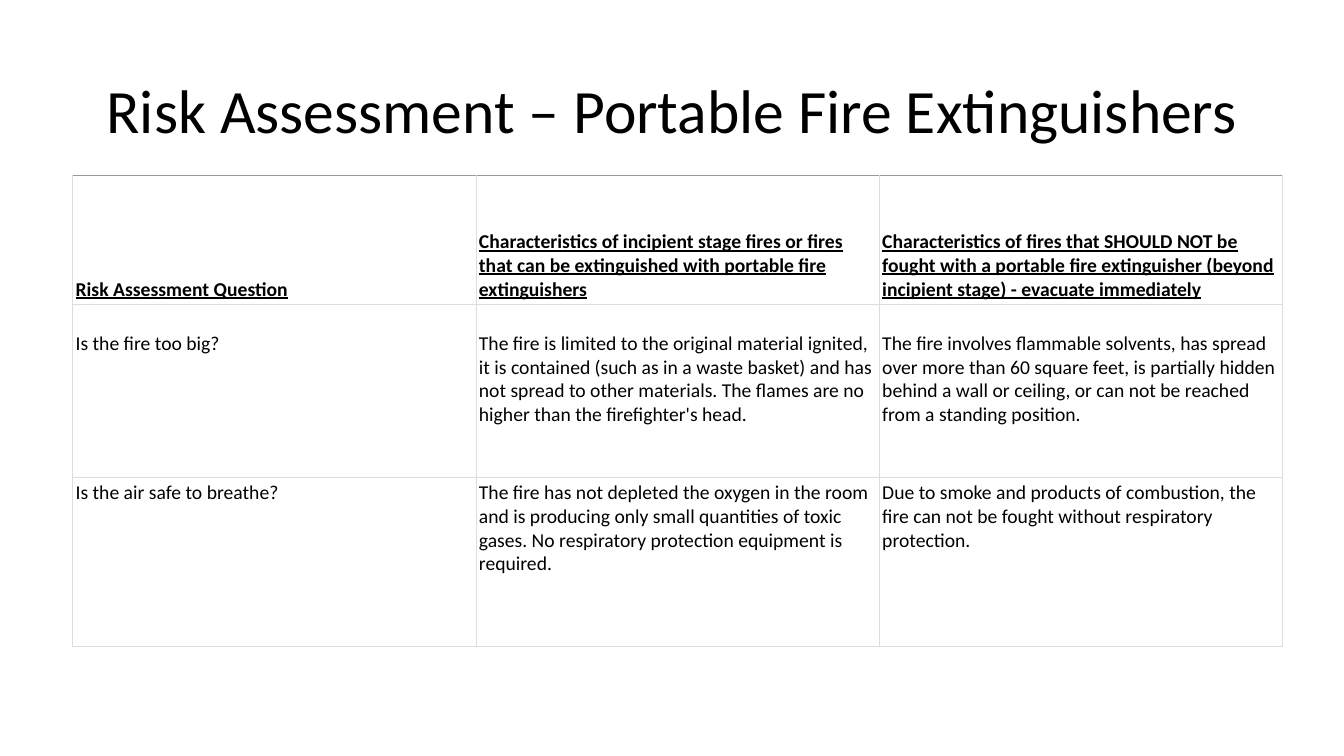
from lxml.etree import SubElement
from pptx import Presentation
from pptx.dml.color import RGBColor
from pptx.enum.text import MSO_ANCHOR as Anchor, PP_ALIGN as Align
from pptx.oxml.ns import qn
from pptx.util import Inches, Pt

COLORS = {"text": "000000", "paper": "FFFFFF", "grid": "DDDDDD", "top": "999999"}
FONT = "Calibri"
COLUMN_WIDTH = 4
ROW_HEIGHTS = [1.28, 1.72, 1.67]
ROW_TOP_INSETS = [0.03, 0.27, 0.03]
INSET = 0.03
TITLE = "Risk Assessment – Portable Fire Extinguishers"
ASSESSMENT = [
    ["Risk Assessment Question",
     "Characteristics of incipient stage fires or fires that can be extinguished "
     "with portable fire extinguishers",
     "Characteristics of fires that SHOULD NOT be fought with a portable fire "
     "extinguisher (beyond incipient stage) - evacuate immediately"],
    ["Is the fire too big?",
     "The fire is limited to the original material ignited, it is contained (such as "
     "in a waste basket) and has not spread to other materials. The flames are no "
     "higher than the firefighter's head.",
     "The fire involves flammable solvents, has spread over more than 60 square feet, "
     "is partially hidden behind a wall or ceiling, or can not be reached from a "
     "standing position."],
    ["Is the air safe to breathe?",
     "The fire has not depleted the oxygen in the room and is producing only small "
     "quantities of toxic gases. No respiratory protection equipment is required.",
     "Due to smoke and products of combustion, the fire can not be fought without "
     "respiratory protection."],
]


def add_run(paragraph, words, size, emphasis=False):
    """Add one formatted run to a paragraph."""
    run = paragraph.add_run()
    run.text = words
    run.font.name = FONT
    run.font.size = Pt(size)
    run.font.bold = run.font.underline = emphasis
    run.font.color.rgb = RGBColor.from_string(COLORS["text"])


def draw_borders(cell, top_color):
    """Draw the four thin borders of a cell."""
    properties = cell._tc.get_or_add_tcPr()
    sides = {"L": COLORS["grid"], "R": COLORS["grid"], "T": top_color, "B": COLORS["grid"]}
    for side, color in sides.items():
        border = SubElement(properties, qn(f"a:ln{side}"), w=str(Pt(0.6)))
        fill = SubElement(border, qn("a:solidFill"))
        SubElement(fill, qn("a:srgbClr"), val=color)


def fill_cell(cell, words, is_header, top_inset):
    """Write and format one table cell."""
    draw_borders(cell, COLORS["top"] if is_header else COLORS["grid"])
    cell.fill.solid()
    cell.fill.fore_color.rgb = RGBColor.from_string(COLORS["paper"])
    cell.margin_left = cell.margin_right = cell.margin_bottom = Inches(INSET)
    cell.margin_top = Inches(top_inset)
    cell.vertical_anchor = Anchor.BOTTOM if is_header else Anchor.TOP
    add_run(cell.text_frame.paragraphs[0], words, 14, is_header)


def add_title(slide):
    """Place and format the slide title."""
    title = slide.shapes.title
    title.left, title.top = Inches(0.92), Inches(0.4)
    title.width, title.height = Inches(11.5), Inches(1.45)
    title.text_frame.vertical_anchor = Anchor.MIDDLE
    title.text_frame.word_wrap = True
    heading = title.text_frame.paragraphs[0]
    heading.alignment = Align.CENTER
    heading.line_spacing = 0.9
    add_run(heading, TITLE, 44)


def add_assessment(slide):
    """Add the risk assessment table."""
    column_count = len(ASSESSMENT[0])
    table = slide.shapes.add_table(
        len(ASSESSMENT), column_count, Inches(0.72), Inches(1.74),
        Inches(COLUMN_WIDTH * column_count), Inches(sum(ROW_HEIGHTS))).table
    table.horz_banding = False
    for row_index, answers in enumerate(ASSESSMENT):
        table.rows[row_index].height = Inches(ROW_HEIGHTS[row_index])
        for column_index, words in enumerate(answers):
            fill_cell(table.cell(row_index, column_index), words,
                      row_index == 0, ROW_TOP_INSETS[row_index])


def main():
    """Build and save the slide."""
    presentation = Presentation()
    presentation.slide_width, presentation.slide_height = Inches(13.33), Inches(7.5)
    slide = presentation.slides.add_slide(presentation.slide_layouts[5])
    add_title(slide)
    add_assessment(slide)
    presentation.save("out.pptx")


if __name__ == "__main__":
    main()
